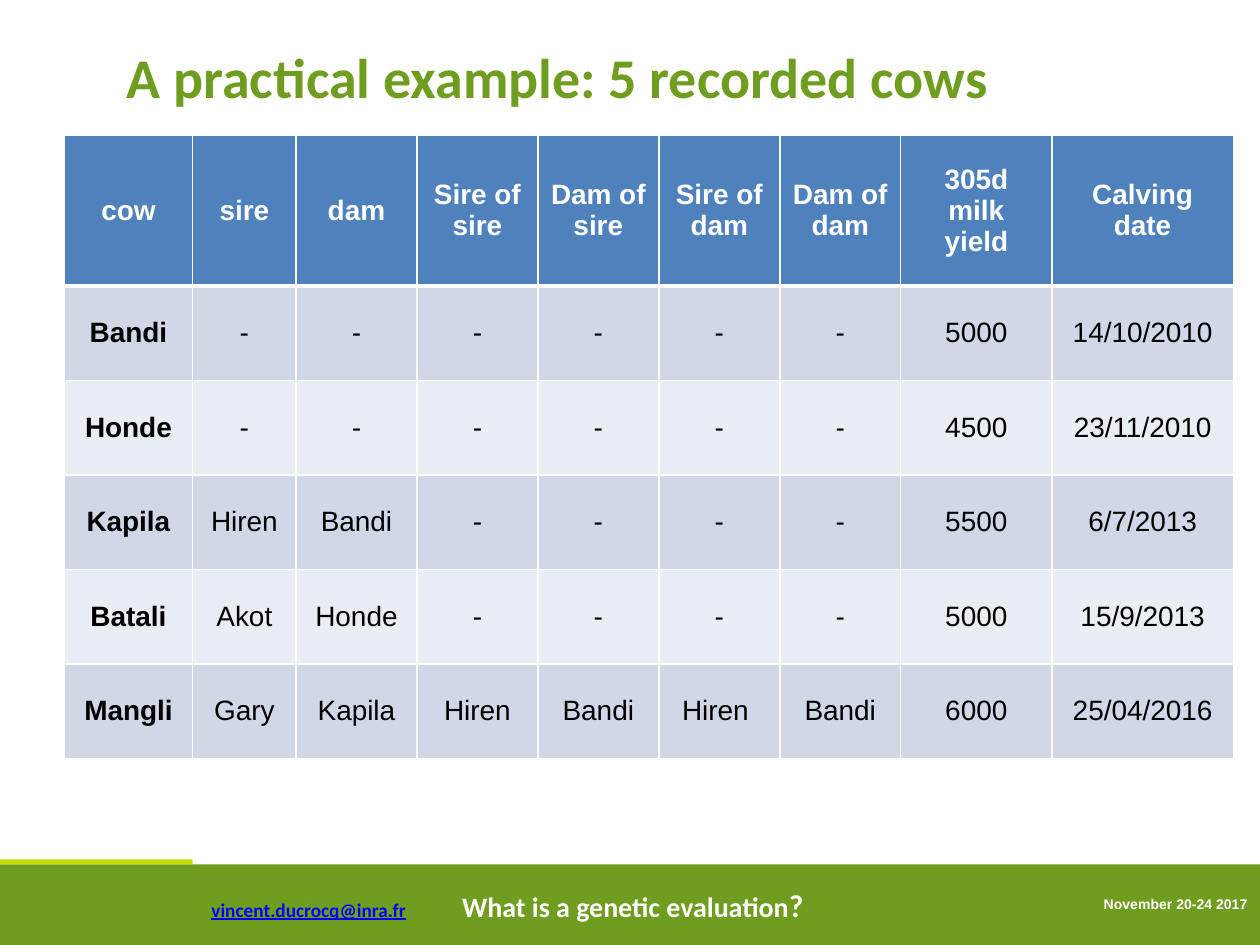
from dataclasses import dataclass

from lxml import etree
from pptx import Presentation
from pptx.dml.color import RGBColor
from pptx.enum.shapes import MSO_SHAPE
from pptx.enum.text import MSO_ANCHOR, MSO_AUTO_SIZE, PP_ALIGN
from pptx.oxml.ns import qn
from pptx.util import Inches, Pt

RECTANGLE = MSO_SHAPE.RECTANGLE
MIDDLE = MSO_ANCHOR.MIDDLE
FIT_TEXT = MSO_AUTO_SIZE.SHAPE_TO_FIT_TEXT
LEFT, CENTER, RIGHT = PP_ALIGN.LEFT, PP_ALIGN.CENTER, PP_ALIGN.RIGHT


@dataclass(frozen=True)
class Theme:
    green: str = "6F9D20"
    lime: str = "C5DD01"
    white: str = "FFFFFF"
    black: str = "000000"
    link: str = "0000FF"
    header: str = "4F81BD"
    bands: tuple = ("D0D8E8", "E9EDF4")
    heading_font: str = "Calibri"
    body_font: str = "Arial"
    title_size: int = 32
    mark_size: int = 18
    body_size: int = 16
    email_size: int = 11
    date_size: int = 8


THEME = Theme()

COLUMN_WIDTHS = [1.02, 0.82] + [0.96] * 5 + [1.2, 1.44]
HEADER_HEIGHT, ROW_HEIGHT = 1.2, 0.75
COWS = [
    ["cow", "sire", "dam", "Sire of sire", "Dam of sire", "Sire of dam",
     "Dam of dam", "305d milk yield", "Calving date"],
    ["Bandi", "-", "-", "-", "-", "-", "-", "5000", "14/10/2010"],
    ["Honde", "-", "-", "-", "-", "-", "-", "4500", "23/11/2010"],
    ["Kapila", "Hiren", "Bandi", "-", "-", "-", "-", "5500", "6/7/2013"],
    ["Batali", "Akot", "Honde", "-", "-", "-", "-", "5000", "15/9/2013"],
    ["Mangli", "Gary", "Kapila", "Hiren", "Bandi", "Hiren ", "Bandi", "6000",
     "25/04/2016"],
]


def add_run(paragraph, text, size, font, color, bold=True, underline=False):
    run = paragraph.add_run()
    run.text = text
    run.font.size = Pt(size)
    run.font.name = font
    run.font.bold = bold
    run.font.underline = underline
    run.font.color.rgb = RGBColor.from_string(color)


def add_line(slide, left, top, width, height, align=LEFT):
    box = slide.shapes.add_textbox(
        Inches(left), Inches(top), Inches(width), Inches(height))
    frame = box.text_frame
    frame.word_wrap = True
    frame.auto_size = FIT_TEXT
    paragraph = frame.paragraphs[0]
    paragraph.alignment = align
    return paragraph


def add_bar(slide, left, top, width, height, color):
    bar = slide.shapes.add_shape(
        RECTANGLE, Inches(left), Inches(top), Inches(width), Inches(height))
    bar.shadow.inherit = False
    bar.fill.solid()
    bar.fill.fore_color.rgb = RGBColor.from_string(color)
    bar.line.fill.background()


def add_tab_stop(paragraph, position):
    properties = paragraph._p.get_or_add_pPr()
    stops = etree.SubElement(properties, qn("a:tabLst"))
    etree.SubElement(stops, qn("a:tab"), pos=str(Inches(position)), algn="l")


def add_footer(slide, left, top, width, height):
    add_bar(slide, left, top, width, height, THEME.green)
    add_bar(slide, left, top - 0.04, 1.53, 0.04, THEME.lime)

    topic = add_line(slide, left + 1.58, top + 0.12, 7.44, 0.4)
    add_tab_stop(topic, 1.99)
    font = THEME.heading_font
    add_run(topic, "vincent.ducrocq@inra.fr", THEME.email_size, font,
            THEME.link, underline=True)
    add_run(topic, "\t", THEME.email_size, font, THEME.white)
    add_run(topic, "What is a genetic evaluation", THEME.body_size, font,
            THEME.white)
    add_run(topic, "?", THEME.mark_size, font, THEME.white)

    date = add_line(slide, left + width - 2.08, top + 0.2, 2.08, 0.23, RIGHT)
    add_run(date, "November 20-24 2017", THEME.date_size, THEME.body_font,
            THEME.white)


def add_title(slide, left, top, width, height):
    title = add_line(slide, left, top, width, height)
    add_run(title, "A practical example: 5 recorded cows", THEME.title_size,
            THEME.heading_font, THEME.green)


def set_borders(cell, top, bottom):
    properties = cell._tc.get_or_add_tcPr()
    widths = {"a:lnL": 1, "a:lnR": 1, "a:lnT": top, "a:lnB": bottom}
    for position, (side, width) in enumerate(widths.items()):
        border = etree.Element(qn(side), w=str(Pt(width)))
        fill = etree.SubElement(border, qn("a:solidFill"))
        etree.SubElement(fill, qn("a:srgbClr"), val=THEME.white)
        properties.insert(position, border)


def fill_cell(cell, text, row, column):
    is_header = row == 0
    background = THEME.header if is_header else THEME.bands[(row - 1) % 2]
    cell.fill.solid()
    cell.fill.fore_color.rgb = RGBColor.from_string(background)
    cell.vertical_anchor = MIDDLE
    set_borders(cell, top=3 if row == 1 else 1, bottom=3 if is_header else 1)
    paragraph = cell.text_frame.paragraphs[0]
    paragraph.alignment = CENTER
    add_run(paragraph, text, THEME.body_size, THEME.body_font,
            THEME.white if is_header else THEME.black,
            bold=is_header or column == 0)


def add_cow_table(slide, left, top, width, height):
    table = slide.shapes.add_table(
        len(COWS), len(COLUMN_WIDTHS), Inches(left), Inches(top),
        Inches(width), Inches(height)).table
    for column, column_width in zip(table.columns, COLUMN_WIDTHS):
        column.width = Inches(column_width)
    for row, values in enumerate(COWS):
        table.rows[row].height = Inches(ROW_HEIGHT if row else HEADER_HEIGHT)
        for column, text in enumerate(values):
            fill_cell(table.cell(row, column), text, row, column)


def main():
    presentation = Presentation()
    presentation.slide_width = Inches(10)
    presentation.slide_height = Inches(7.5)
    slide = presentation.slides.add_slide(presentation.slide_layouts[6])
    add_footer(slide, 0, 6.86, 10, 0.64)
    add_title(slide, 0.91, 0.29, 9.84, 0.64)
    add_cow_table(slide, 0.51, 1.07, sum(COLUMN_WIDTHS),
                  HEADER_HEIGHT + ROW_HEIGHT * (len(COWS) - 1))
    presentation.save("out.pptx")


if __name__ == "__main__":
    main()
